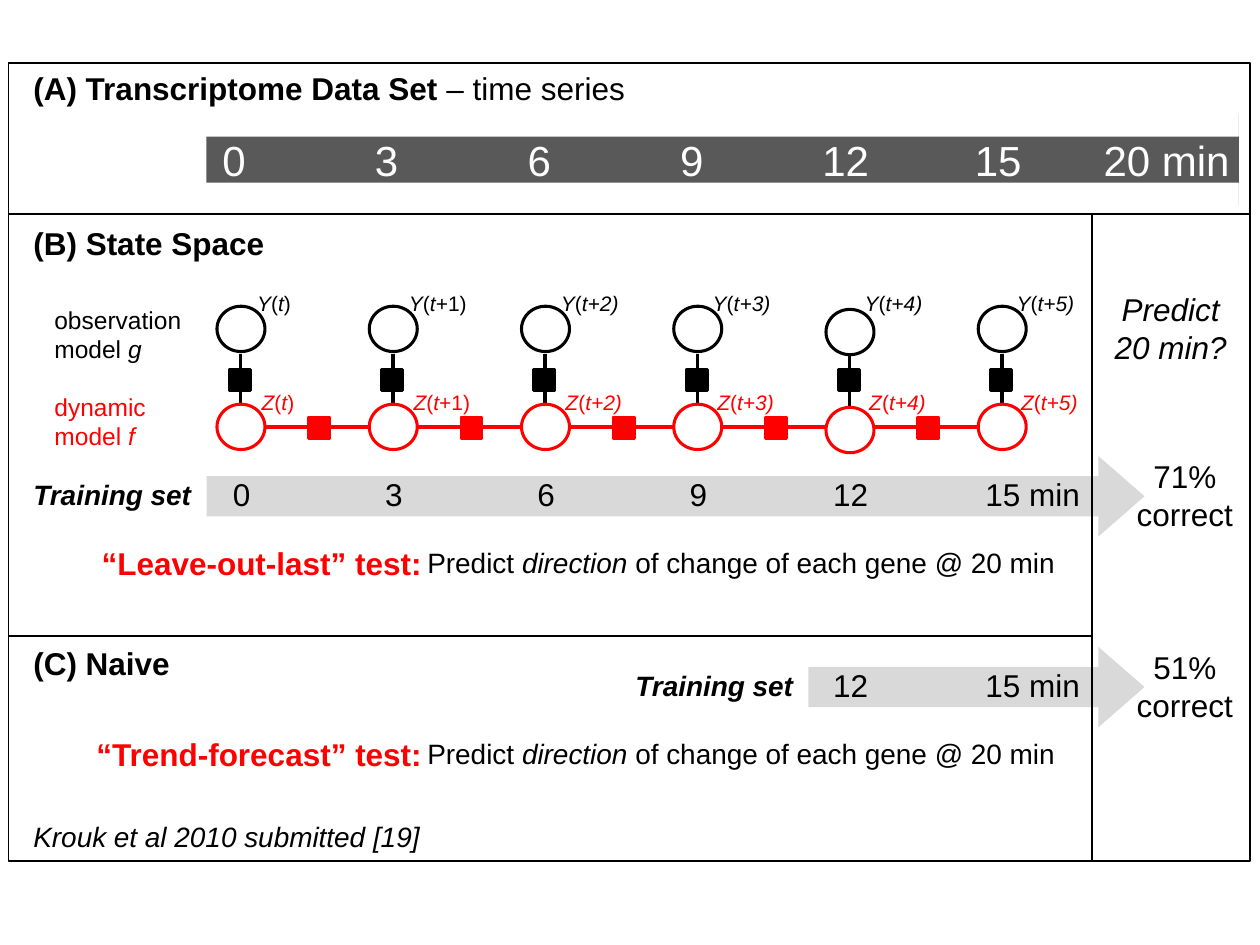
from dataclasses import dataclass

from lxml import etree
from pptx import Presentation
from pptx import util as u
from pptx.dml.color import RGBColor
from pptx.enum import shapes, text
from pptx.oxml import ns


@dataclass(frozen=True)
class Theme:
    font: str = "Arial"
    black: str = "000000"
    white: str = "FFFFFF"
    red: str = "FF0000"
    dark: str = "595959"
    light: str = "D9D9D9"
    label: int = 12
    model: int = 14
    body: int = 16
    heading: int = 18
    scale: int = 24


class Board:
    def __init__(self, slide, theme):
        self.slide = slide
        self.theme = theme

    def shape(self, kind, box, fill=None, line=None, width=1, adjustments=()):
        shape = self.slide.shapes.add_shape(kind, *map(u.Pt, box))
        shape.shadow.inherit = False
        for index, value in enumerate(adjustments):
            shape.adjustments[index] = value
        if fill:
            shape.fill.solid()
            shape.fill.fore_color.rgb = RGBColor.from_string(fill)
        else:
            shape.fill.background()
        if line:
            shape.line.color.rgb = RGBColor.from_string(line)
            shape.line.width = u.Pt(width)
        else:
            shape.line.fill.background()

    def square(self, left, top, color):
        self.shape(shapes.MSO_SHAPE.RECTANGLE, (left, top, 12.2, 12.2), color, color, 1.5)

    def circle(self, left, top, color):
        self.shape(shapes.MSO_SHAPE.OVAL, (left, top, 27.4, 25.9), self.theme.white, color, 1.75)

    def arrow(self, box, color, head):
        self.shape(shapes.MSO_SHAPE.RIGHT_ARROW, box, color, adjustments=(0.5, head))

    def line(self, start, end, color, width):
        line = self.slide.shapes.add_connector(
            shapes.MSO_CONNECTOR.STRAIGHT, *map(u.Pt, (*start, *end)))
        line.line.color.rgb = RGBColor.from_string(color)
        line.line.width = u.Pt(width)
        etree.SubElement(line._element.spPr, ns.qn("a:effectLst"))

    def text(self, box, runs, size, color, wrap=False, center=False):
        text_box = self.slide.shapes.add_textbox(*map(u.Pt, box))
        frame = text_box.text_frame
        frame.word_wrap = wrap
        frame.auto_size = text.MSO_AUTO_SIZE.SHAPE_TO_FIT_TEXT
        paragraph = frame.paragraphs[0]
        paragraph.alignment = text.PP_ALIGN.CENTER if center else text.PP_ALIGN.LEFT
        for words, style in runs:
            run = paragraph.add_run()
            run.text = words
            run.font.name = self.theme.font
            run.font.size = u.Pt(size)
            run.font.bold = "b" in style
            run.font.italic = "i" in style
            run.font.color.rgb = RGBColor.from_string(color)


PITCH = 87
TIMES = ["0", "3", "6", "9", "12", "15"]
STEPS = [
    [("t", "i"), (")", "")],
    [("t", "i"), ("+1)", "")],
    *[[(f"t+{step})", "i")] for step in range(2, 6)],
]


def draw_data_set(board):
    theme = board.theme
    board.arrow((118, 65, 590, 52.5), theme.dark, 0)
    board.text((12, 36, 363, 29),
               [("(A) Transcriptome Data Set ", "b"), ("– time series", "")],
               theme.heading, theme.black)
    for index, time in enumerate(TIMES):
        wide = len(time) > 1
        left = 120 + 87.2 * index - 6 * wide
        board.text((left, 73.4, 41.5 if wide else 28, 36.5), [(time, "")],
                   theme.scale, theme.white)
    board.text((623.5, 73.4, 87, 36.5), [("20 min", "")], theme.scale, theme.white)


def draw_state_space(board):
    theme = board.theme
    board.text((12, 124.5, 148, 29), [("(B) State Space", "b")], theme.heading, theme.black)
    board.text((24, 170.5, 102, 41), [("observation model ", ""), ("g", "i")],
               theme.model, theme.black, wrap=True)
    board.text((24, 220.5, 90, 41), [("dynamic model ", ""), ("f", "i")],
               theme.model, theme.red, wrap=True)
    board.line((150.5, 244), (573, 244), theme.red, 2)
    for index, step in enumerate(STEPS):
        left = 124 + PITCH * index
        drop = 1.8 if index == 4 else 0
        label_left = 139.8 + 86.8 * index
        board.square(left + 7, 211, theme.black)
        board.line((left + 13.5, 202.3), (left + 13.5, 231.8), theme.black, 2)
        board.text((label_left, 162.7, 90, 21.8), [("Y", "i"), ("(", ""), *step],
                   theme.label, theme.black, wrap=True)
        board.circle(left, 175 + drop, theme.black)
        board.circle(left, 231 + drop, theme.red)
        board.text((label_left + 2.6, 218.9, 90, 21.8), [("Z", "i"), ("(", ""), *step],
                   theme.label, theme.red, wrap=True)
        if index < len(STEPS) - 1:
            board.square(left + 52.4, 238.4, theme.red)


def draw_test(board, shift, first, name, name_left, training_left, result):
    theme = board.theme
    start = 118 if first == 0 else 462
    board.arrow((start, 260.6 + shift, 654 - start, 46), theme.light, 0.573)
    for index, time in list(enumerate(TIMES))[first:]:
        wide = len(time) > 1
        last = index == len(TIMES) - 1
        width = 69 if last else 34.5 if wide else 24.5
        board.text((126 + PITCH * index - 5 * wide, 267.8 + shift, width, 29),
                   [(time + " min" if last else time, "")], theme.heading, theme.black)
    board.text((training_left, 269.5 + shift, 106, 26.6), [("Training set", "bi")],
               theme.body, theme.black)
    board.text((name_left, 307.4 + shift, 251 - name_left, 29), [(name, "b")],
               theme.heading, theme.red)
    board.text((218, 308.4 + shift, 411, 26.6),
               [("Predict ", ""), ("direction", "i"),
                (" of change of each gene @ 20 min", "")],
               theme.body, theme.black, wrap=True, center=True)
    board.text((640, 257.6 + shift, 74, 51), [(result, "")],
               theme.heading, theme.black, wrap=True, center=True)


def draw_panels(board):
    theme = board.theme
    board.text((12, 364.5, 94, 29), [("(C) Naive", "b")], theme.heading, theme.black)
    board.text((12, 465, 360, 26.6), [("Krouk et al 2010 submitted [19]", "i")],
               theme.body, theme.black, wrap=True)
    board.text((624, 162, 90, 51), [("Predict 20 min?", "i")],
               theme.heading, theme.black, wrap=True, center=True)
    board.shape(shapes.MSO_SHAPE.RECTANGLE, (5, 36, 709.4, 456), line=theme.black, width=0.75)
    for start, end in [((5, 122.4), (714.4, 122.4)),
                       ((624, 123), (624, 492)),
                       ((5, 363.5), (624, 363.5))]:
        board.line(start, end, theme.black, 1)


def main():
    presentation = Presentation()
    presentation.slide_width, presentation.slide_height = u.Pt(720), u.Pt(540)
    slide = presentation.slides.add_slide(presentation.slide_layouts[6])
    board = Board(slide, Theme())
    draw_data_set(board)
    draw_state_space(board)
    draw_test(board, 0, 0, "“Leave-out-last” test:", 51, 12, "71% correct")
    draw_test(board, 109, 4, "“Trend-forecast” test:", 48, 356, "51% correct")
    draw_panels(board)
    presentation.save("out.pptx")


if __name__ == "__main__":
    main()
